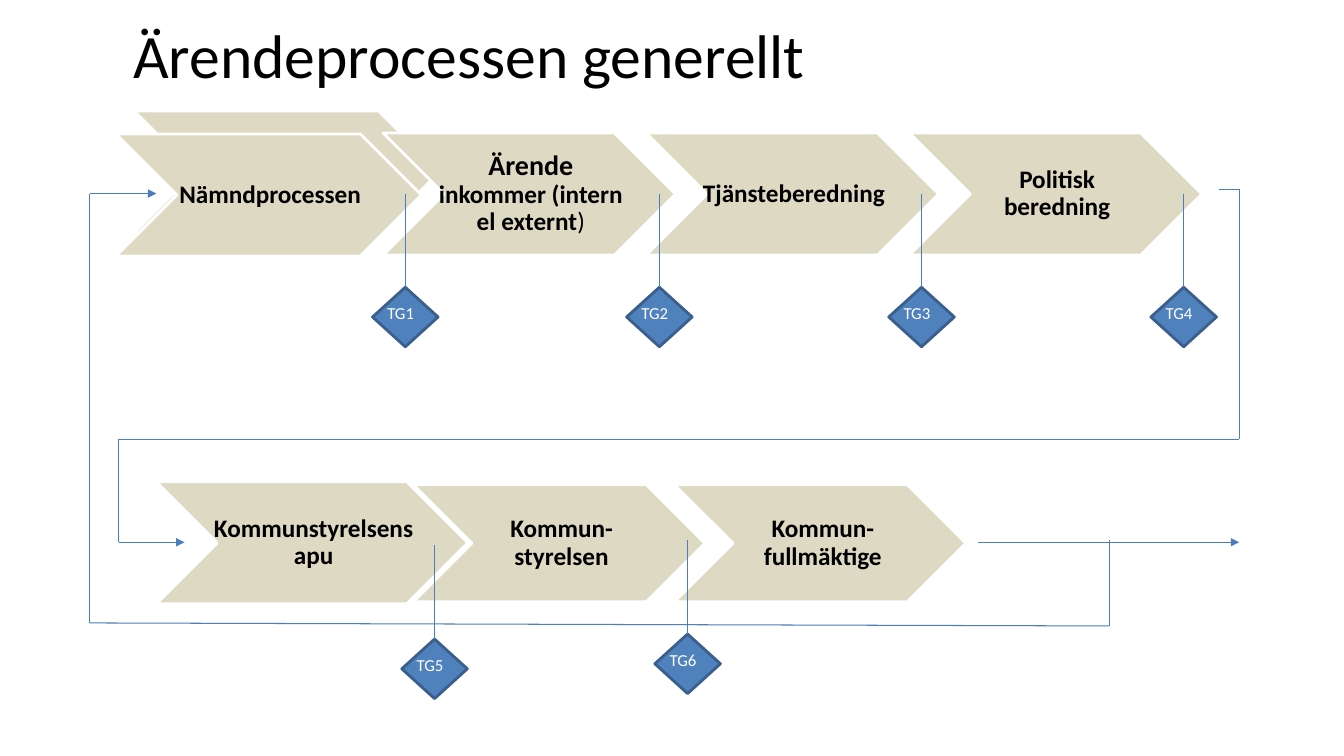
import lxml.etree
import pptx
import pptx.dml.color
import pptx.enum.shapes
import pptx.enum.text
import pptx.oxml.ns
import pptx.util
from dataclasses import dataclass

Inches = pptx.util.Inches
Pt = pptx.util.Pt
SHAPES = pptx.enum.shapes.MSO_SHAPE

# Content: each label is a list of (text, type size, bold) runs
TITLE = "Ärendeprocessen generellt"
COMMITTEE = [("Nämndprocessen", 18, True)]
INTAKE = [("Ärende ", 20, True), ("inkommer (intern el externt", 18, True), (")", 18, False)]
PREPARATION = [("Tjänsteberedning", 18, True)]
POLITICAL = [("Politisk beredning", 18, True)]
BOARD_PREPARATION = [("Kommunstyrelsens apu", 18, True)]
BOARD = [("Kommun-styrelsen", 18, True)]
COUNCIL = [("Kommun-fullmäktige", 18, True)]

# Grid, in inches
TOP_ROW, TOP_GATES = 1.32, 2.85
STEP_X, STEP_PITCH, STEP_WIDTH, STEP_HEIGHT = 3.8, 2.61, 2.9, 1.21
WIDE_WIDTH = 3.03
BOARD_ROW, BOARD_HEIGHT = 4.81, 1.16
GATE_WIDTH, GATE_HEIGHT, STEM = 0.65, 0.59, 0.93
FLOW_Y, LANE_Y, RETURN_Y = 5.38, 4.36, 6.21
LEFT_X, LANE_X, RETURN_X, RIGHT_X = 0.89, 1.18, 11, 12.29

# Steps with a wide text area: label, left, top, width
WIDE_STEPS = [([], 1.33, 1.1, WIDE_WIDTH)]
WIDE_STEPS += [(label, STEP_X + column * STEP_PITCH, TOP_ROW, STEP_WIDTH)
               for column, label in enumerate([INTAKE, PREPARATION, POLITICAL])]
WIDE_STEPS += [(BOARD_PREPARATION, 1.55, 4.78, 3.09), (COMMITTEE, 1.15, 1.33, WIDE_WIDTH)]
# Steps whose label stays between the chevron's points: label, left
NARROW_STEPS = [(BOARD, 4.1), (COUNCIL, 6.69)]

# Gates: name, centre, top
GATES = [("TG1", 4.02, TOP_GATES)]
GATES += [(f"TG{number}", 6.54 + (number - 2) * 2.6, TOP_GATES) for number in (2, 3, 4)]
GATES += [("TG5", 4.31, 6.34), ("TG6", 6.82, 6.29)]

# Routes: corner points, the last leg having an arrowhead
ROUTES = [
    [(12.09, 1.88), (RIGHT_X, 1.88), (RIGHT_X, LANE_Y), (LANE_X, LANE_Y),
     (LANE_X, FLOW_Y), (1.83, FLOW_Y)],
    [(RETURN_X, 5.36), (RETURN_X, RETURN_Y), (LEFT_X, 6.18), (LEFT_X, 1.92), (1.55, 1.92)],
    [(9.7, FLOW_Y), (RIGHT_X, FLOW_Y)],
]


@dataclass
class Theme:
    font: str = "Calibri"
    text: str = "000000"
    step: str = "DDD9C3"
    white: str = "FFFFFF"
    gate: str = "4F81BD"
    gate_edge: str = "3A5F8C"
    flow: str = "4B7EBC"
    title_size: float = 44
    gate_size: float = 12
    edge: float = 2
    flow_width: float = 0.75


theme = Theme()


def rgb(value):
    return pptx.dml.color.RGBColor.from_string(value)


def format_run(run, size, color, bold=False):
    run.font.name = theme.font
    run.font.size = Pt(size)
    run.font.bold = bold
    run.font.color.rgb = rgb(color)


def paint(shape, fill, edge):
    shape.shadow.inherit = False
    shape.fill.solid()
    shape.fill.fore_color.rgb = rgb(fill)
    shape.line.color.rgb = rgb(edge)
    shape.line.width = Pt(theme.edge)


def set_margins(frame, left, top, right, bottom):
    frame.margin_left, frame.margin_top = Inches(left), Inches(top)
    frame.margin_right, frame.margin_bottom = Inches(right), Inches(bottom)
    frame.vertical_anchor = pptx.enum.text.MSO_ANCHOR.MIDDLE


def write_step(shape, label, left, right):
    paint(shape, theme.step, theme.white)
    frame = shape.text_frame
    frame.word_wrap = True
    set_margins(frame, left, 0.02, right, 0.02)
    paragraph = frame.paragraphs[0]
    paragraph.alignment = pptx.enum.text.PP_ALIGN.CENTER
    paragraph.line_spacing = 0.9
    for text, size, bold in label:
        run = paragraph.add_run()
        run.text = text
        format_run(run, size, theme.text, bold)


def add_wide_step(slide, label, left, top, width):
    # The outline lets the label reach into the points
    depth = STEP_HEIGHT / 2
    right, bottom = left + width, top + STEP_HEIGHT
    corners = [(right - depth, top), (right, top + depth), (right - depth, bottom),
               (left, bottom), (left + depth, top + depth)]
    builder = slide.shapes.build_freeform(Inches(left), Inches(top))
    builder.add_line_segments([(Inches(x), Inches(y)) for x, y in corners], close=True)
    write_step(builder.convert_to_shape(), label, 0.54, 0.51)


def add_narrow_step(slide, label, left):
    shape = slide.shapes.add_shape(SHAPES.CHEVRON, Inches(left), Inches(BOARD_ROW),
                                   Inches(2.89), Inches(BOARD_HEIGHT))
    write_step(shape, label, 0.08, 0.03)


def add_line(slide, start, end, arrow=False):
    line = slide.shapes.add_connector(pptx.enum.shapes.MSO_CONNECTOR.STRAIGHT,
                                      *(Inches(value) for value in (*start, *end)))
    line.line.color.rgb = rgb(theme.flow)
    line.line.width = Pt(theme.flow_width)
    qn = pptx.oxml.ns.qn
    if arrow:
        lxml.etree.SubElement(line.line._get_or_add_ln(), qn("a:tailEnd"), type="triangle")
    lxml.etree.SubElement(line._element.spPr, qn("a:effectLst"))
    return line


def add_gate(slide, name, center, top):
    diamond = slide.shapes.add_shape(SHAPES.DIAMOND, Inches(center - GATE_WIDTH / 2),
                                     Inches(top), Inches(GATE_WIDTH), Inches(GATE_HEIGHT))
    paint(diamond, theme.gate, theme.gate_edge)
    frame = diamond.text_frame
    frame.word_wrap = False
    set_margins(frame, 0, 0, 0.09, 0.08)
    frame.text = name
    frame.paragraphs[0].alignment = pptx.enum.text.PP_ALIGN.CENTER
    format_run(frame.paragraphs[0].runs[0], theme.gate_size, theme.white)
    stem = add_line(slide, (center, top - STEM), (center, top))
    stem.end_connect(diamond, 0)


def add_title(slide):
    title = slide.shapes.title
    title.left, title.top = Inches(1.22), Inches(-0.09)
    title.width, title.height = Inches(9.53), Inches(1.25)
    frame = title.text_frame
    frame.text = TITLE
    frame.auto_size = pptx.enum.text.MSO_AUTO_SIZE.NONE
    frame.vertical_anchor = pptx.enum.text.MSO_ANCHOR.MIDDLE
    frame.paragraphs[0].alignment = pptx.enum.text.PP_ALIGN.LEFT
    format_run(frame.paragraphs[0].runs[0], theme.title_size, theme.text)


def main():
    presentation = pptx.Presentation()
    presentation.slide_width, presentation.slide_height = Inches(13.33), Inches(7.5)
    slide = presentation.slides.add_slide(presentation.slide_layouts[5])
    add_title(slide)
    # Process steps
    for step in WIDE_STEPS:
        add_wide_step(slide, *step)
    for step in NARROW_STEPS:
        add_narrow_step(slide, *step)
    # Flow between the rows
    for route in ROUTES:
        for start, end in zip(route, route[1:]):
            add_line(slide, start, end, arrow=end == route[-1])
    # Decision gates
    for gate in GATES:
        add_gate(slide, *gate)
    presentation.save("out.pptx")


if __name__ == "__main__":
    main()
